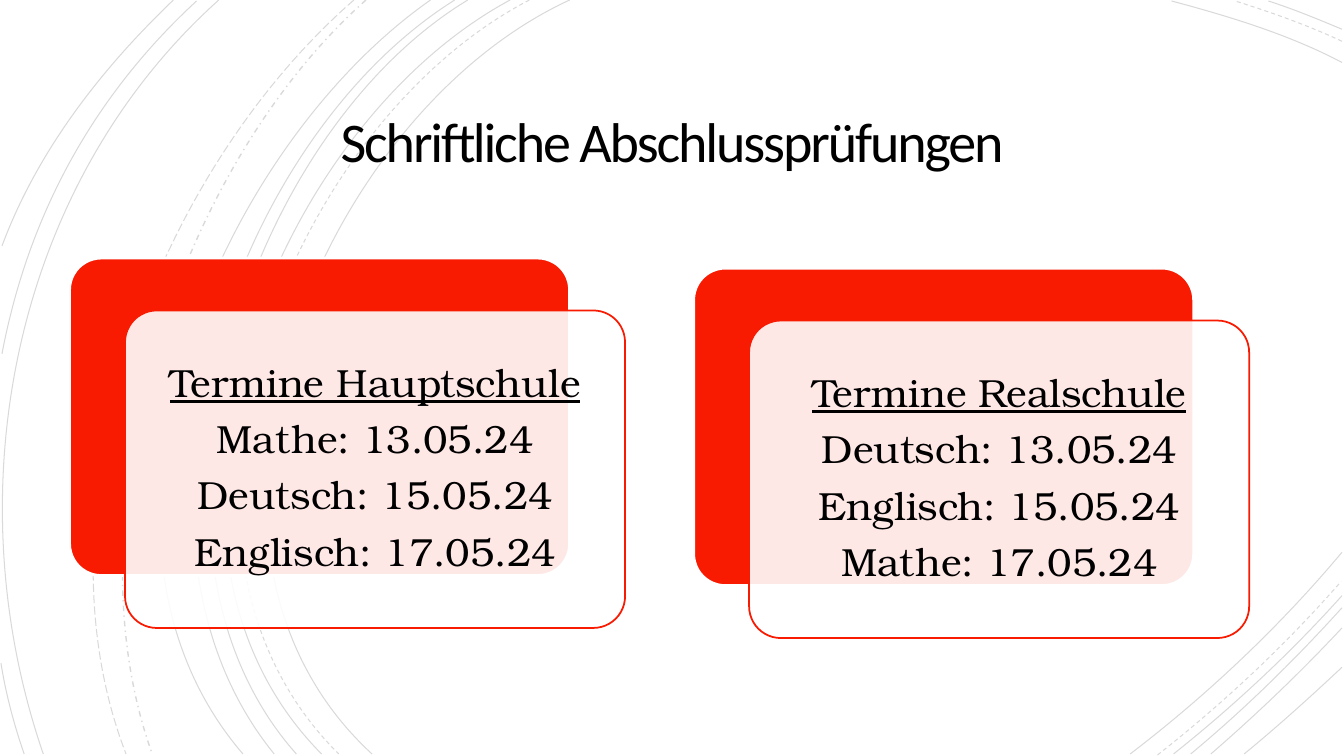
from lxml.etree import SubElement
from pptx import Presentation
from pptx.dml.color import RGBColor
from pptx.enum.dml import MSO_LINE as Dash
from pptx.enum.shapes import MSO_SHAPE as Kind
from pptx.enum.text import MSO_ANCHOR as Anchor, MSO_AUTO_SIZE as Fit, PP_ALIGN as Align
from pptx.oxml.ns import qn
from pptx.util import Inches, Pt

TITLE = "Schriftliche Abschlussprüfungen"
CARDS = [
    (0.69, 2.56, ["Termine Hauptschule", "Mathe: 13.05.24",
                  "Deutsch: 15.05.24", "Englisch: 17.05.24"]),
    (6.88, 2.66, ["Termine Realschule", "Deutsch: 13.05.24",
                  "Englisch: 15.05.24", "Mathe: 17.05.24"]),
]
ARCS = {
    (Dash.SOLID, 0.75): [
        [(5.65, 0), (3.15, 1.15), (1.43, 5.4), (3.69, 7.48)],
        [(13.31, 0.62), (12.78, 0.34), (12.18, 0.16), (11.62, 0.01)],
        [(11.21, 7.48), (11.97, 6.9), (12.69, 6.22), (13.31, 5.48)],
        [(5.06, 0), (2.7, 1.27), (1.1, 5.37), (3.19, 7.48)],
        [(13.31, 0.29), (13.07, 0.19), (12.83, 0.09), (12.58, 0.01)],
        [(11.64, 7.48), (12.23, 7.01), (12.8, 6.48), (13.31, 5.91)],
        [(4.64, 0), (2.44, 1.33), (1.1, 5.41), (2.94, 7.48)],
        [(11.81, 7.48), (12.34, 7.04), (12.84, 6.55), (13.31, 6.03)],
        [(4.51, 0), (2.31, 1.38), (0.97, 5.33), (2.72, 7.48)],
        [(12.01, 7.48), (12.46, 7.09), (12.9, 6.67), (13.31, 6.23)],
        [(4.27, 0), (2.17, 1.47), (0.53, 5.29), (2.41, 7.48)],
        [(12.34, 7.48), (12.67, 7.21), (12.99, 6.92), (13.31, 6.62)],
        [(2.17, 0), (0.11, 1.85), (-0.46, 4.9), (0.43, 7.48)],
        [(1.95, 0.01), (0.92, 0.96), (0.28, 2.14), (0.02, 3.51)],
        [(0.01, 6.58), (0.06, 6.89), (0.14, 7.19), (0.24, 7.48)],
        [(1.72, 0), (1, 0.69), (0.37, 1.5), (0.02, 2.44)],
    ],
    (Dash.DASH, 0.75): [
        [(5.25, 0), (2.85, 1.25), (1.23, 5.37), (3.36, 7.48)],
        [(13.31, 0.41), (12.97, 0.25), (12.6, 0.12), (12.25, 0.01)],
        [(11.48, 7.49), (12.13, 6.98), (12.75, 6.4), (13.3, 5.77)],
    ],
    (Dash.DASH_DOT, 1): [[(3.63, 0), (1.76, 1.66), (0.65, 5.09), (1.51, 7.48)]],
    (Dash.LONG_DASH, 0.75): [[(3.51, 0), (1.57, 1.69), (0.29, 4.99), (1.25, 7.48)]],
}
RED = RGBColor(0xF8, 0x1B, 0x02)
WHITE = RGBColor(0xFF, 0xFF, 0xFF)
BLACK = RGBColor(0, 0, 0)
CARD_W, CARD_H = 4.96, 3.15
STEP_X, STEP_Y = 0.55, 0.52
INSET = 0.09


def fade(part, share):
    """Set the opacity, in percent, of the colour inside an XML part."""
    color = next(part.iter(qn("a:srgbClr")))
    SubElement(color, qn("a:alpha")).set("val", str(share * 1000))


def pad(frame, size):
    """Give a text frame equal margins and middle anchoring."""
    frame.margin_left = frame.margin_right = Inches(size)
    frame.margin_top = frame.margin_bottom = Inches(size)
    frame.vertical_anchor = Anchor.MIDDLE
    frame.word_wrap = True
    frame.auto_size = Fit.NONE


def style(para, font, size, gap):
    """Format one centred paragraph and its runs."""
    para.alignment = Align.CENTER
    para.line_spacing = gap
    for run in para.runs:
        run.font.name = font
        run.font.size = Pt(size)
        run.font.color.rgb = BLACK


def draw_arc(group, points, dash, width):
    """Draw one faint cubic curve from four points."""
    (x, y), *rest = [(Inches(a), Inches(b)) for a, b in points]
    pen = group.shapes.build_freeform(x, y)
    pen.add_line_segments(rest, close=False)
    arc = pen.convert_to_shape()
    arc.shadow.inherit = False
    arc.fill.background()
    arc.line.color.rgb = BLACK
    arc.line.width = Pt(width)
    arc.line.dash_style = dash
    fade(arc.element, 15)
    track = next(arc.element.iter(qn("a:path")))
    lines = track.findall(qn("a:lnTo"))
    curve = SubElement(track, qn("a:cubicBezTo"))
    for line in lines:
        curve.append(line[0])
        track.remove(line)


def add_panel(group, x, y, fill, edge, width):
    """Add one rounded panel to a card."""
    panel = group.shapes.add_shape(Kind.ROUNDED_RECTANGLE, Inches(x), Inches(y),
                                   Inches(CARD_W), Inches(CARD_H))
    panel.adjustments[0] = 0.1
    panel.shadow.inherit = False
    panel.fill.solid()
    panel.fill.fore_color.rgb = fill
    panel.line.color.rgb = edge
    panel.line.width = Pt(width)
    return panel


def add_card(slide, x, y, lines):
    """Add a red panel, its pale overlay and the exam dates."""
    group = slide.shapes.add_group_shape()
    add_panel(group, x, y, RED, WHITE, 2)
    x, y = x + STEP_X, y + STEP_Y
    fade(add_panel(group, x, y, WHITE, RED, 1.25).element, 90)
    box = group.shapes.add_textbox(Inches(x + INSET), Inches(y + INSET),
                                   Inches(CARD_W - 2 * INSET), Inches(CARD_H - 2 * INSET))
    frame = box.text_frame
    pad(frame, 0.12)
    frame.text = "\n".join(lines)
    for para in frame.paragraphs:
        style(para, "TeX Gyre Bonum", 28, 0.9)
        para.space_after = Pt(9.8)
    frame.paragraphs[0].runs[0].font.underline = True


def main():
    """Build and save the slide."""
    deck = Presentation()
    deck.slide_width, deck.slide_height = Inches(13.33), Inches(7.5)
    slide = deck.slides.add_slide(deck.slide_layouts[5])
    title = slide.shapes.title
    title.left, title.top = Inches(1.92), Inches(0.87)
    title.width, title.height = Inches(9.49), Inches(1.15)
    title.text_frame.text = TITLE
    pad(title.text_frame, 0.25)
    style(title.text_frame.paragraphs[0], "Calibri", 40, 0.85)
    next(title.element.iter(qn("a:rPr"))).set("spc", "-150")
    group = slide.shapes.add_group_shape()
    for (dash, width), arcs in ARCS.items():
        for points in arcs:
            draw_arc(group, points, dash, width)
    title.element.addprevious(group.element)
    for x, y, lines in CARDS:
        add_card(slide, x, y, lines)
    deck.save("out.pptx")


if __name__ == "__main__":
    main()
